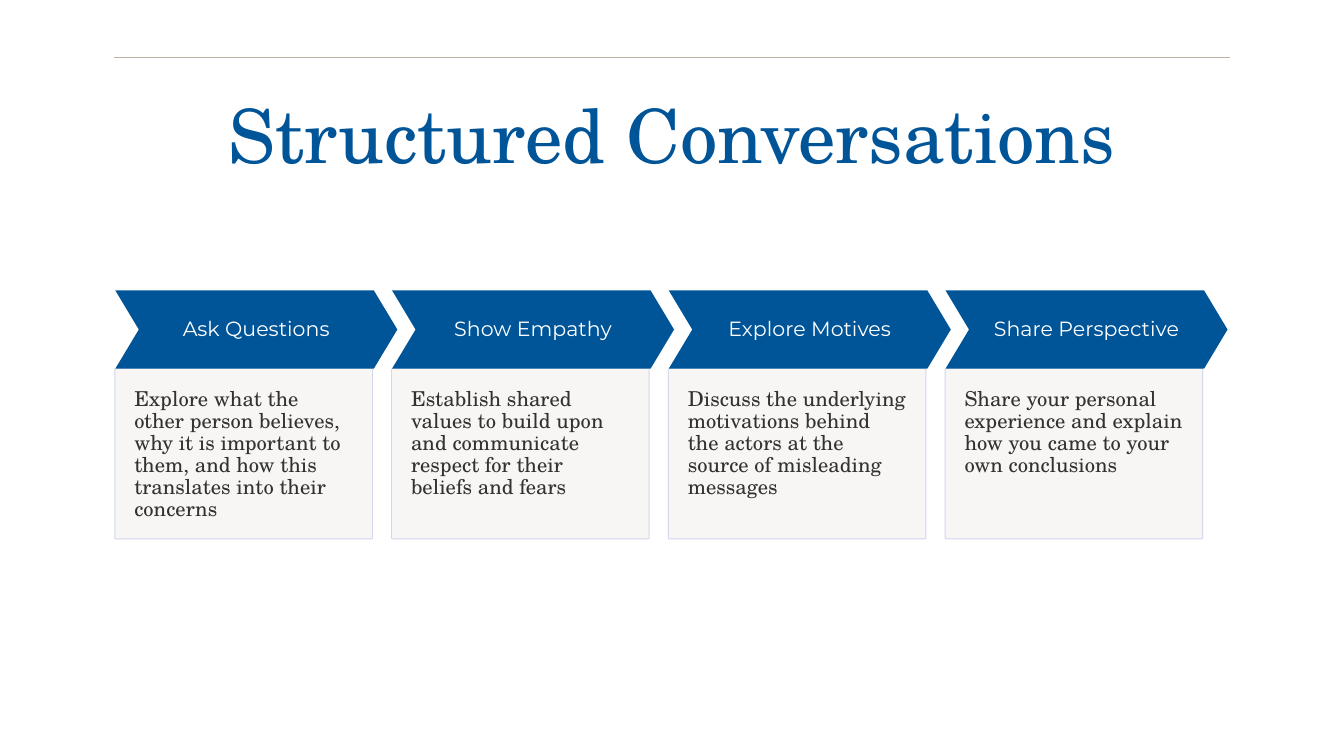
"""Build the Structured Conversations slide: four chevron steps with descriptions."""
import pptx
import pptx.dml.color
import pptx.enum.shapes
import pptx.enum.text
import pptx.oxml.ns
import pptx.util
from lxml import etree

Cm = pptx.util.Cm
Pt = pptx.util.Pt
RGBColor = pptx.dml.color.RGBColor
SHAPE = pptx.enum.shapes.MSO_SHAPE
ALIGN = pptx.enum.text.PP_ALIGN
ANCHOR = pptx.enum.text.MSO_ANCHOR
qn = pptx.oxml.ns.qn

TITLE = "Structured Conversations"
STEPS = [
    ("Ask Questions",
     "Explore what the other person believes, why it is important to them, "
     "and how this translates into their concerns"),
    ("Show Empathy",
     "Establish shared values to build upon and communicate respect for "
     "their beliefs and fears"),
    ("Explore Motives",
     "Discuss the underlying motivations behind the actors at the source of "
     "misleading messages"),
    ("Share Perspective",
     "Share your personal experience and explain how you came to your own "
     "conclusions"),
]

BLUE = RGBColor(0x00, 0x54, 0x98)
TAN = RGBColor(0xBC, 0xB2, 0x9F)
LAVENDER = RGBColor(0xCC, 0xD3, 0xEA)
CREAM = RGBColor(0xF7, 0xF6, 0xF4)
CHARCOAL = RGBColor(0x32, 0x32, 0x32)
WHITE = RGBColor(0xFF, 0xFF, 0xFF)
SERIF = "TeX Gyre Schola"
SANS = "Montserrat"

LEFT, PITCH = 2.18, 5.23
CHEVRON_TOP, CHEVRON_WIDTH, CHEVRON_HEIGHT = 5.49, 5.33, 1.48
LABEL_INDENT, LABEL_WIDTH = 0.48, 4.37
PANEL_TOP, PANEL_WIDTH, PANEL_HEIGHT = 6.98, 4.85, 3.2


def write(shape, text, font, size, color, align, anchor, insets):
    frame = shape.text_frame
    frame.text = text
    frame.word_wrap = True
    frame.auto_size = pptx.enum.text.MSO_AUTO_SIZE.NONE
    frame.vertical_anchor = anchor
    frame.margin_left, frame.margin_top, frame.margin_right, frame.margin_bottom = map(Cm, insets)
    paragraph = frame.paragraphs[0]
    paragraph.alignment = align
    paragraph.line_spacing = 0.9
    paragraph.space_before = Pt(0)
    run_font = paragraph.runs[0].font
    run_font.name, run_font.size, run_font.color.rgb = font, Pt(size), color


def add_block(slide, kind, box, color):
    block = slide.shapes.add_shape(kind, *map(Cm, box))
    block.shadow.inherit = False
    block.fill.solid()
    block.fill.fore_color.rgb = color
    block.line.fill.background()
    return block


def add_border(block, color):
    block.line.color.rgb = color
    block.line.width = Pt(1)
    for tint in block.element.spPr.iter(qn("a:srgbClr")):
        etree.SubElement(tint, qn("a:alpha")).set("val", "89000")


def add_step(slide, left, label, description):
    panel_box = (left, PANEL_TOP, PANEL_WIDTH, PANEL_HEIGHT)
    add_border(add_block(slide, SHAPE.RECTANGLE, panel_box, LAVENDER), LAVENDER)
    panel = add_block(slide, SHAPE.RECTANGLE, panel_box, CREAM)
    write(panel, description, SERIF, 11, CHARCOAL, ALIGN.LEFT, ANCHOR.TOP,
          (0.36, 0.36, 0.36, 0.71))

    chevron = add_block(slide, SHAPE.CHEVRON,
                        (left, CHEVRON_TOP, CHEVRON_WIDTH, CHEVRON_HEIGHT), BLUE)
    chevron.adjustments[0] = 0.3
    heading = slide.shapes.add_textbox(Cm(left + LABEL_INDENT), Cm(CHEVRON_TOP),
                                       Cm(LABEL_WIDTH), Cm(CHEVRON_HEIGHT))
    write(heading, label, SANS, 11, WHITE, ALIGN.CENTER, ANCHOR.MIDDLE, (0.18,) * 4)


def main():
    deck = pptx.Presentation()
    deck.slide_width, deck.slide_height = Cm(25.4), Cm(14.29)
    slide = deck.slides.add_slide(deck.slide_layouts[5])

    rule = slide.shapes.add_connector(pptx.enum.shapes.MSO_CONNECTOR.STRAIGHT,
                                      Cm(2.16), Cm(1.09), Cm(23.24), Cm(1.09))
    rule.line.color.rgb = TAN
    rule.line.width = Pt(0.75)
    etree.SubElement(rule.element.spPr, qn("a:effectLst"))

    title = slide.shapes.title
    title.left, title.top, title.width, title.height = map(Cm, (1.75, 1.47, 21.9, 2.34))
    write(title, TITLE, SERIF, 40, BLUE, ALIGN.CENTER, ANCHOR.MIDDLE,
          (0.25, 0.13, 0.25, 0.13))

    for index, (label, description) in enumerate(STEPS):
        add_step(slide, LEFT + index * PITCH, label, description)

    deck.save("out.pptx")


if __name__ == "__main__":
    main()
